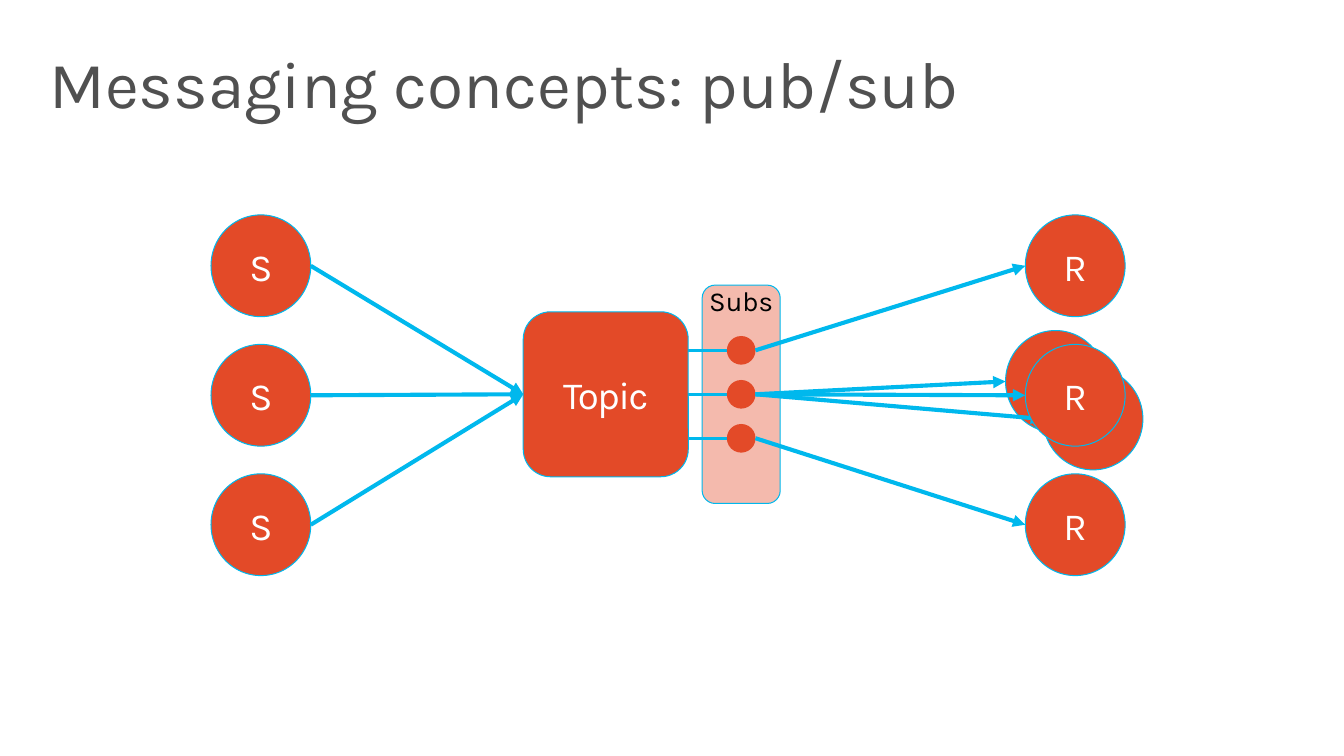
from pptx import Presentation
from pptx.dml.color import RGBColor
from pptx.enum.shapes import MSO_CONNECTOR, MSO_SHAPE
from pptx.enum.text import MSO_ANCHOR, MSO_AUTO_SIZE, PP_ALIGN
from pptx.oxml.ns import qn
from pptx.util import Inches, Pt
from lxml import etree

STRAIGHT = MSO_CONNECTOR.STRAIGHT
OVAL, ROUNDED = MSO_SHAPE.OVAL, MSO_SHAPE.ROUNDED_RECTANGLE
MIDDLE, CENTER, LEFT = MSO_ANCHOR.MIDDLE, PP_ALIGN.CENTER, PP_ALIGN.LEFT
LEFT_SIDE, RIGHT_SIDE = 1, 3

THEME = {
    "font": "Karla",
    "fill": RGBColor.from_string("E34A28"),
    "line": RGBColor.from_string("00B8ED"),
    "title": RGBColor.from_string("505050"),
    "light": RGBColor.from_string("FFFFFF"),
    "dark": RGBColor.from_string("000000"),
    "title_size": 48, "node_size": 28, "label_size": 20,
    "outline": 0.75, "arrow": 3, "stub": 2,
}

# Grid in inches: three node rows and three subscription rows
MID, ROW = 4.0, 1.31
NODE_W, NODE_H = 1.01, 1.03
SENDER_X, RECEIVER_X = 2.64, 10.88
TOPIC_X, TOPIC_MID, TOPIC_SIZE = 6.13, 3.99, 1.67
SUBS_X, SUBS_W, SUBS_H = 7.5, 0.79, 2.21
DOT, DOT_ROW = 0.29, 0.445
DOT_EDGE = SUBS_X + DOT / 2
STEPS = (-1, 0, 1)


def add_node(kind, cx, cy, w, h, text="", outline=True):
    """Add a filled shape centred on (cx, cy)."""
    s = shapes.add_shape(kind, Inches(cx - w / 2), Inches(cy - h / 2),
                         Inches(w), Inches(h))
    s.shadow.inherit = False
    s.fill.solid()
    s.fill.fore_color.rgb = THEME["fill"]
    if outline:
        s.line.color.rgb = THEME["line"]
        s.line.width = Pt(THEME["outline"])
    else:
        s.line.fill.background()
    if text:
        tf = s.text_frame
        for side in ("left", "top", "right", "bottom"):
            setattr(tf, f"margin_{side}", Inches(0.04))
        tf.vertical_anchor = MIDDLE
        p = tf.paragraphs[0]
        p.alignment = CENTER
        r = p.add_run()
        r.text = text
        r.font.name, r.font.size = THEME["font"], Pt(THEME["node_size"])
        r.font.color.rgb = THEME["light"]
        r.font._element.set("spc", "-100")
    return s


def add_line(x1, y1, x2, y2, width, arrow=True):
    c = shapes.add_connector(STRAIGHT, *(Inches(v) for v in (x1, y1, x2, y2)))
    c.line.color.rgb = THEME["line"]
    c.line.width = Pt(width)
    if arrow:
        etree.SubElement(c.line._get_or_add_ln(), qn("a:tailEnd"), type="triangle")
    etree.SubElement(c._element.spPr, qn("a:effectLst"))
    return c


prs = Presentation()
prs.slide_width, prs.slide_height = Inches(13.6), Inches(7.65)
slide = prs.slides.add_slide(prs.slide_layouts[5])
shapes = slide.shapes

title = shapes.title
title.left, title.top = Inches(0.3), Inches(0.33)
title.width, title.height = Inches(13), Inches(1)
tf = title.text_frame
tf.text = "Messaging concepts: pub/sub"
frame_format = {
    "margin_left": Inches(0.2), "margin_right": Inches(0.2),
    "margin_top": Inches(0.05), "margin_bottom": Inches(0.05),
    "vertical_anchor": MIDDLE, "auto_size": MSO_AUTO_SIZE.NONE,
}
for name, value in frame_format.items():
    setattr(tf, name, value)
p = tf.paragraphs[0]
p.alignment = LEFT
r = p.runs[0]
r.font.name, r.font.size = THEME["font"], Pt(THEME["title_size"])
r.font.color.rgb = THEME["title"]

# Subscriptions panel and topic
panel = add_node(ROUNDED, SUBS_X, TOPIC_MID, SUBS_W, SUBS_H)
color = panel.fill._xPr.find(qn("a:solidFill"))[0]
etree.SubElement(color, qn("a:alpha"), val="38000")
topic = add_node(ROUNDED, TOPIC_X, TOPIC_MID, TOPIC_SIZE, TOPIC_SIZE, "Topic")

# Senders, each pointing at the topic
for step in STEPS:
    y = MID + step * ROW
    add_node(OVAL, SENDER_X, y, NODE_W, NODE_H, "S")
    c = add_line(SENDER_X + NODE_W / 2, y, TOPIC_X - TOPIC_SIZE / 2, TOPIC_MID,
                 THEME["arrow"])
    c.end_connect(topic, LEFT_SIDE)

# Subscriptions hanging off the topic
for step in STEPS:
    y = TOPIC_MID + step * DOT_ROW
    c = add_line(TOPIC_X + TOPIC_SIZE / 2, y, SUBS_X, y, THEME["stub"], arrow=False)
    if step == 0:
        c.begin_connect(topic, RIGHT_SIDE)
    add_node(OVAL, SUBS_X, y, DOT, DOT, outline=False)

label = shapes.add_textbox(Inches(SUBS_X - 0.66), Inches(2.82), Inches(1.32), Inches(0.44))
tf = label.text_frame
tf.word_wrap = True
tf.vertical_anchor = MIDDLE
p = tf.paragraphs[0]
p.alignment = CENTER
r = p.add_run()
r.text = "Subs"
r.font.name, r.font.size = THEME["font"], Pt(THEME["label_size"])
r.font.color.rgb = THEME["dark"]

# Receivers: (x offset, y offset, subscription row); the middle row is a stack
receivers = [(0, -ROW, -1), (0, ROW, 1), (-0.2, -0.14, 0), (0.18, 0.24, 0), (0, 0, 0)]
for dx, dy, step in receivers:
    x, y = RECEIVER_X + dx, MID + dy
    add_node(OVAL, x, y, NODE_W, NODE_H, "R")
    add_line(DOT_EDGE, TOPIC_MID + step * DOT_ROW, x - NODE_W / 2, y, THEME["arrow"])

prs.save("out.pptx")
